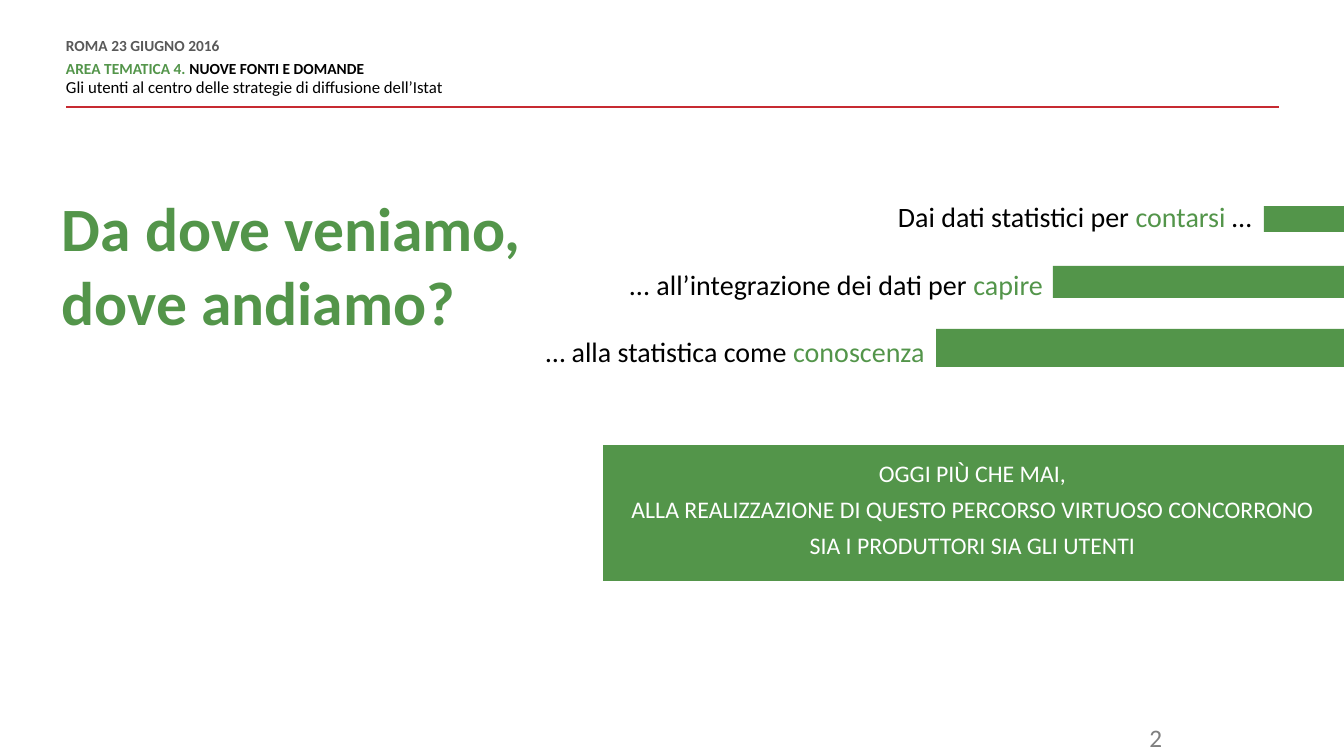
from pptx import Presentation
from pptx import util as u
from pptx.dml.color import RGBColor
from pptx.enum import shapes, text
from pptx.oxml.ns import qn
from lxml import etree

PX = 914400 / 100.8
GREEN, RED, BLACK, WHITE = "53954A", "C72A31", "000000", "FFFFFF"
W, H = 1344, 756


def px(*lengths):
    return [u.Emu(round(n * PX)) for n in lengths]


def add_text(box, paragraphs, inset=None):
    """Fill a new text box; each paragraph is a list of (text, size, colour, bold)."""
    tf = s.shapes.add_textbox(*px(*box)).text_frame
    tf.word_wrap = True
    if inset is not None:
        tf.margin_left = tf.margin_top = tf.margin_right = tf.margin_bottom = inset
    for i, runs in enumerate(paragraphs):
        p = tf.add_paragraph() if i else tf.paragraphs[0]
        for words, size, colour, bold in runs:
            r = p.add_run()
            r.text = words
            r.font.name, r.font.size, r.font.bold = "Calibri", u.Pt(size), bold
            r.font.color.rgb = RGBColor.from_string(colour)
    return tf


prs = Presentation()
prs.slide_width, prs.slide_height = px(W, H)
s = prs.slides.add_slide(prs.slide_layouts[6])

# Header
rule = s.shapes.add_connector(shapes.MSO_CONNECTOR.STRAIGHT, *px(1279, 107, 66, 107))
rule.line.color.rgb = RGBColor.from_string(RED)
rule.line.width = u.Pt(2)
etree.SubElement(rule._element.spPr, qn("a:effectLst"))

header = add_text((66, 39, 841, 59), [
    [("ROMA 23 GIUGNO 2016", 11, "595959", True)],
    [("AREA TEMATICA 4. ", 11, GREEN, True), ("NUOVE FONTI E DOMANDE", 11, BLACK, True)],
    [("Gli utenti al centro delle strategie di diffusione dell’Istat", 12, BLACK, False)],
], inset=0)
for p in header.paragraphs:
    p.line_spacing = u.Pt(10.8)
header.paragraphs[0].space_after = u.Pt(6)
header.paragraphs[2].space_before = u.Pt(3)

# Page number
number = add_text((870, 717, 302, 40), [[("2", 18, "7F7F7F", False)]])
number.paragraphs[0].alignment = text.PP_ALIGN.RIGHT

# Title
add_text((62, 190, 483, 144), [[("Da dove veniamo, dove andiamo?", 44, GREEN, True)]], inset=0)

# Green blocks running to the right edge: left, top, height
bars = [(1264, 206, 26), (1053, 266, 32), (936, 329, 38)]
blocks = [(shapes.MSO_SHAPE.RECTANGLE, *bar) for bar in bars]
blocks.append((shapes.MSO_SHAPE.LINE_CALLOUT_1, 603, 445, 136))
for kind, left, top, height in blocks:
    sp = s.shapes.add_shape(kind, *px(left, top, W - left, height))
    sp.shadow.inherit = False
    sp.fill.solid()
    sp.fill.fore_color.rgb = RGBColor.from_string(GREEN)
    sp.line.fill.background()

# Message on the large block
message = add_text((605, 445, 735, 121), [
    [("OGGI PIÙ CHE MAI,", 17, WHITE, False)],
    [("ALLA REALIZZAZIONE DI QUESTO PERCORSO VIRTUOSO CONCORRONO "
      "SIA I PRODUTTORI SIA GLI UTENTI", 17, WHITE, False)],
])
message.vertical_anchor = text.MSO_ANCHOR.MIDDLE
for p in message.paragraphs:
    p.alignment = text.PP_ALIGN.CENTER
    p.line_spacing = u.Pt(25.4)

# Steps, each indented towards its bar
steps = [
    (370, "Dai dati statistici per ", "contarsi ", "…"),
    (101, "... all’integrazione dei dati per ", "capire", ""),
    (18, "… alla statistica come ", "conoscenza", ""),
]
step_text = add_text((518, 195, 747, 179), [
    [(words, 20, colour, False)
     for words, colour in zip(words_of_step, (BLACK, GREEN, BLACK)) if words]
    for _, *words_of_step in steps
])
for i, (p, (indent, *_)) in enumerate(zip(step_text.paragraphs, steps)):
    p._p.get_or_add_pPr().set("marL", str(px(indent)[0]))
    if i:
        p.space_before = u.Pt(24)

prs.save("out.pptx")
